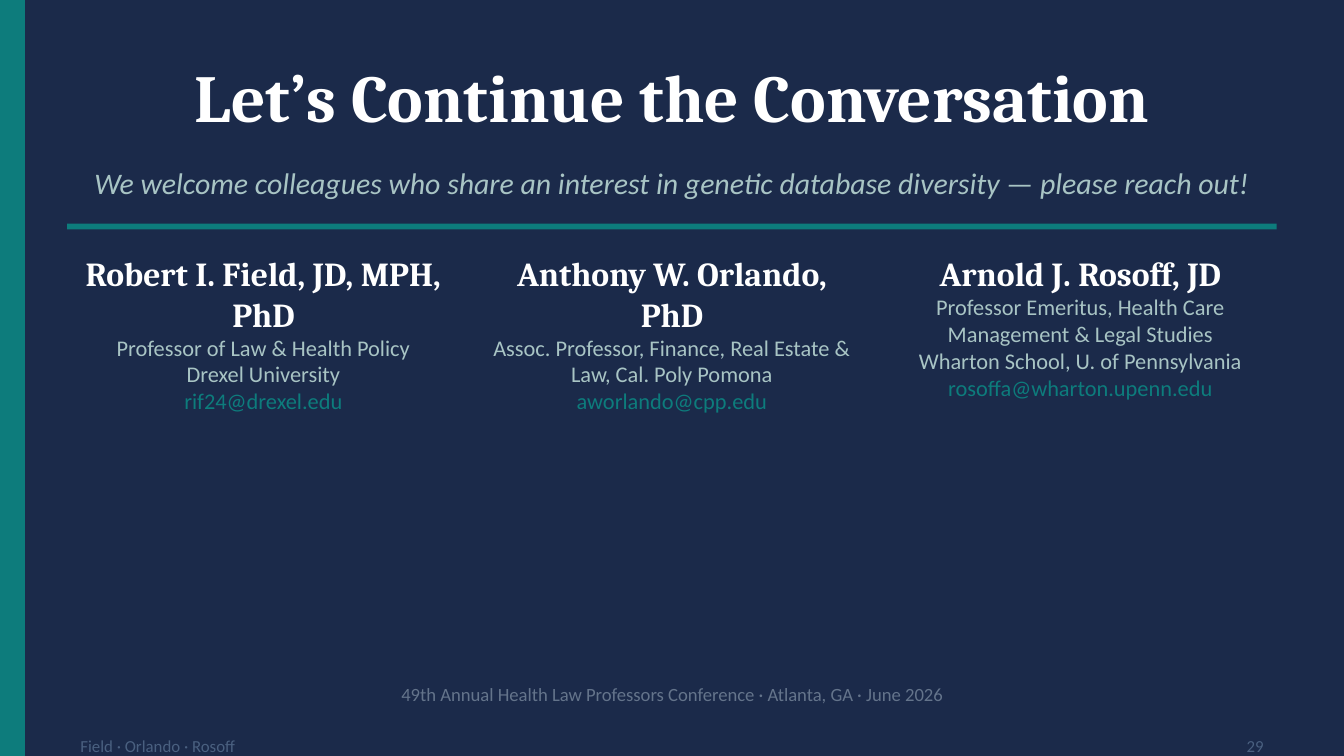
from pptx import Presentation
from pptx.dml.color import RGBColor
from pptx.enum.shapes import MSO_SHAPE
from pptx.enum.text import MSO_ANCHOR, PP_ALIGN
from pptx.util import Cm, Pt

RECT = MSO_SHAPE.RECTANGLE
TOP, MIDDLE = MSO_ANCHOR.TOP, MSO_ANCHOR.MIDDLE
LEFT, CENTER, RIGHT = PP_ALIGN.LEFT, PP_ALIGN.CENTER, PP_ALIGN.RIGHT

COLORS = {
    "navy": "1B2A4A", "teal": "0D7C7C", "white": "FFFFFF",
    "mist": "A8C4C4", "slate": "64748B", "dusk": "4A6080",
}
HEAD, BODY = "Cambria", "Calibri"


def rgb(name):
    return RGBColor.from_string(COLORS[name])


def add_text(box, lines, align=CENTER, anchor=MIDDLE):
    """Add a text box; each line is (text, size, font, color, bold, italic)."""
    frame = slide.shapes.add_textbox(*map(Cm, box)).text_frame
    frame.word_wrap = True
    frame.vertical_anchor = anchor
    for i, (text, size, face, color, bold, italic) in enumerate(lines):
        para = frame.add_paragraph() if i else frame.paragraphs[0]
        para.text = text
        para.alignment = align
        font = para.font
        font.name, font.size = face, Pt(size)
        font.bold, font.italic = bold, italic
        font.color.rgb = rgb(color)


prs = Presentation()
prs.slide_width, prs.slide_height = Cm(25.4), Cm(14.29)
slide = prs.slides.add_slide(prs.slide_layouts[6])
slide.background.fill.solid()
slide.background.fill.fore_color.rgb = rgb("navy")

# Side band and divider
margin, width = 1.27, 22.86
for box, edged in [((0, 0, 0.46, 14.29), True),
                   ((margin, 4.23, width, 0.11), False)]:
    bar = slide.shapes.add_shape(RECT, *map(Cm, box))
    bar.shadow.inherit = False
    bar.fill.solid()
    bar.fill.fore_color.rgb = rgb("teal")
    if edged:
        bar.line.color.rgb = rgb("teal")
        bar.line.width = Pt(1)
    else:
        bar.line.fill.background()

# Heading
add_text((margin, 0.85, width, 1.9),
         [("Let’s Continue the Conversation", 36, HEAD, "white", True, False)])
add_text((margin, 2.96, width, 1),
         [("We welcome colleagues who share an interest in genetic database "
           "diversity — please reach out!", 16, BODY, "mist", False, True)])

# Contacts: name, roles, e-mail
people = [
    ("Robert I. Field, JD, MPH, PhD",
     ["Professor of Law & Health Policy", "Drexel University"],
     "rif24@drexel.edu"),
    ("Anthony W. Orlando, PhD",
     ["Assoc. Professor, Finance, Real Estate & Law, Cal. Poly Pomona"],
     "aworlando@cpp.edu"),
    ("Arnold J. Rosoff, JD",
     ["Professor Emeritus, Health Care Management & Legal Studies",
      "Wharton School, U. of Pennsylvania"],
     "rosoffa@wharton.upenn.edu"),
]
gap = 0.3
col = (width - 2 * gap) / 3
for i, (name, roles, mail) in enumerate(people):
    lines = [(name, 18, HEAD, "white", True, False)]
    lines += [(role, 12, BODY, "mist", False, False) for role in roles]
    lines.append((mail, 12, BODY, "teal", False, False))
    add_text((margin + i * (col + gap), 4.66, col, 2.96), lines, anchor=TOP)

# Event and footer
add_text((margin, 12.7, width, 0.85),
         [("49th Annual Health Law Professors Conference · Atlanta, GA · "
           "June 2026", 10, BODY, "slate", False, False)])
add_text((margin, 13.89, width, 0.4),
         [("Field · Orlando · Rosoff", 9, BODY, "dusk", False, False)], LEFT)
add_text((22.86, 13.89, 1.27, 0.4),
         [("29", 9, BODY, "dusk", False, False)], RIGHT)

prs.save("out.pptx")
